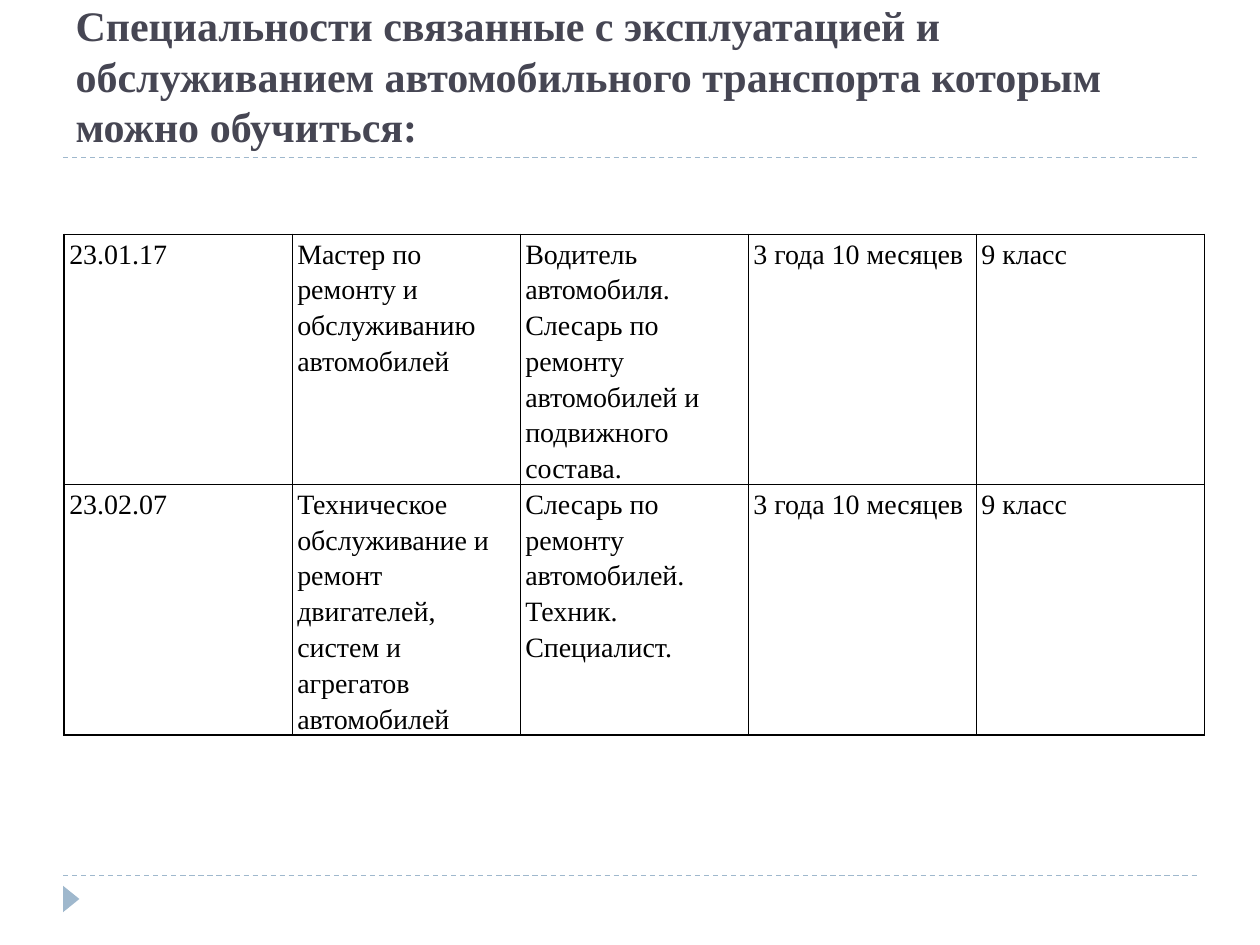
from lxml import etree
from pptx import Presentation
from pptx.dml.color import RGBColor
from pptx.enum import dml, shapes, text
from pptx.oxml import ns
from pptx.util import Inches, Pt

TITLE = ("Специальности связанные с эксплуатацией и обслуживанием "
         "автомобильного транспорта которым можно обучиться:")
SPECIALTIES = [
    ("23.01.17", "Мастер по ремонту и обслуживанию автомобилей",
     "Водитель автомобиля. Слесарь по ремонту автомобилей и подвижного состава.",
     "3 года 10 месяцев", "9 класс"),
    ("23.02.07", "Техническое обслуживание и ремонт двигателей, систем и агрегатов автомобилей",
     "Слесарь по ремонту автомобилей. Техник. Специалист.",
     "3 года 10 месяцев", "9 класс"),
]
COLORS = {"title": "464653", "text": "000000", "border": "000000", "accent": "9FB8CD"}
FONT = "Times New Roman"
RULE_HEIGHTS = (6.95, 1.25)
COLUMN_WIDTH, ROW_HEIGHT = 1.81, 1.98


def color(name):
    return RGBColor.from_string(COLORS[name])


def style_paragraph(paragraph, size, color_name, bold=False):
    paragraph.font.name = FONT
    paragraph.font.size = Pt(size)
    paragraph.font.bold = bold
    paragraph.font.color.rgb = color(color_name)


def add_rule(slide, y):
    rule = slide.shapes.add_connector(
        shapes.MSO_CONNECTOR.STRAIGHT, Inches(0.5), Inches(y), Inches(9.5), Inches(y))
    rule.line.color.rgb = color("accent")
    rule.line.width = Pt(0.75)
    rule.line.dash_style = dml.MSO_LINE.DASH
    etree.SubElement(rule._element.spPr, ns.qn("a:effectLst"))


def add_marker(slide):
    marker = slide.shapes.add_shape(
        shapes.MSO_SHAPE.ISOSCELES_TRIANGLE,
        Inches(0.46), Inches(7.07), Inches(0.21), Inches(0.13))
    marker.rotation = 90
    marker.shadow.inherit = False
    marker.fill.solid()
    marker.fill.fore_color.rgb = color("accent")
    marker.line.fill.background()


def set_title(slide):
    title = slide.shapes.title
    title.left, title.top, title.width, title.height = map(Inches, (0.5, 0.25, 9, 1))
    frame = title.text_frame
    frame.text = TITLE
    frame.word_wrap = True
    frame.auto_size = text.MSO_AUTO_SIZE.NONE
    frame.vertical_anchor = text.MSO_ANCHOR.BOTTOM
    paragraph = frame.paragraphs[0]
    paragraph.alignment = text.PP_ALIGN.LEFT
    style_paragraph(paragraph, 24, "title", bold=True)


def add_borders(cell):
    properties = cell._tc.get_or_add_tcPr()
    for index, side in enumerate(("lnL", "lnR", "lnT", "lnB")):
        border = etree.Element(ns.qn(f"a:{side}"), w=str(Pt(1)))
        fill = etree.SubElement(border, ns.qn("a:solidFill"))
        etree.SubElement(fill, ns.qn("a:srgbClr"), val=COLORS["border"])
        properties.insert(index, border)


def fill_cell(cell, content):
    cell.text = content
    cell.fill.background()
    cell.margin_left = cell.margin_right = Inches(0.04)
    cell.margin_top = cell.margin_bottom = 0
    paragraph = cell.text_frame.paragraphs[0]
    paragraph.line_spacing = 1.15
    style_paragraph(paragraph, 16, "text")
    add_borders(cell)


def add_specialties(slide):
    rows, columns = len(SPECIALTIES), len(SPECIALTIES[0])
    table = slide.shapes.add_table(
        rows, columns, Inches(0.51), Inches(1.86),
        Inches(COLUMN_WIDTH * columns), Inches(ROW_HEIGHT * rows)).table
    table.first_row = table.horz_banding = False
    for column in table.columns:
        column.width = Inches(COLUMN_WIDTH)
    for row, contents in zip(table.rows, SPECIALTIES):
        row.height = Inches(ROW_HEIGHT)
        for cell, content in zip(row.cells, contents):
            fill_cell(cell, content)


def main():
    """Build the slide of automotive specialties."""
    presentation = Presentation()
    presentation.slide_width, presentation.slide_height = Inches(10), Inches(7.5)
    slide = presentation.slides.add_slide(presentation.slide_layouts[5])
    for y in RULE_HEIGHTS:
        add_rule(slide, y)
    add_marker(slide)
    set_title(slide)
    add_specialties(slide)
    presentation.save("out.pptx")


if __name__ == "__main__":
    main()
